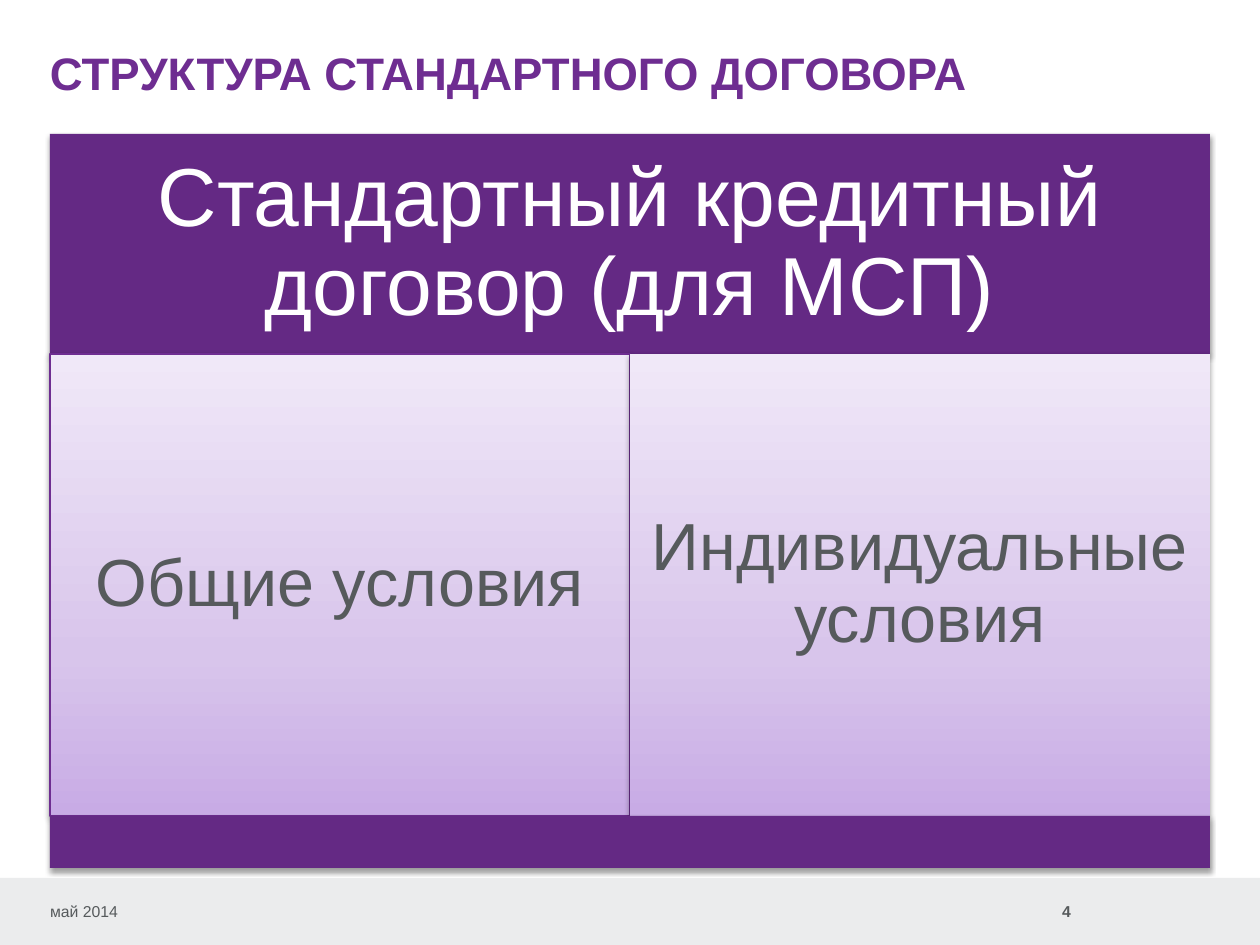
from lxml import etree
from pptx import Presentation
from pptx.dml.color import RGBColor
from pptx.enum.shapes import MSO_SHAPE
from pptx.enum.text import MSO_ANCHOR, PP_ALIGN
from pptx.oxml.ns import qn
from pptx.util import Pt

RECT = MSO_SHAPE.RECTANGLE
MIDDLE, TOP = MSO_ANCHOR.MIDDLE, MSO_ANCHOR.TOP
LEFT, CENTER, RIGHT = PP_ALIGN.LEFT, PP_ALIGN.CENTER, PP_ALIGN.RIGHT
PX = 914400 / 126
COLORS = {
    "title": "6E2D91",
    "band": "642984",
    "text": "565A5C",
    "white": "FFFFFF",
    "footer": "EBECED",
    "shadow": "000000",
}
COLUMN_GRADIENT = [(0, "C8ABE5"), (35, "D8C5EB"), (100, "F0E8F8")]
MARGIN, CONTENT_WIDTH = 50, 1160


def add_panel(left, top, width, height, fill=None, shadow=True):
    """Add a rectangle; without a fill colour it gets the column gradient."""
    panel = slide.shapes.add_shape(
        RECT, *(round(v * PX) for v in (left, top, width, height)))
    panel.line.fill.background()
    if fill:
        panel.fill.solid()
        panel.fill.fore_color.rgb = RGBColor.from_string(COLORS[fill])
    else:
        panel.fill.gradient()
        panel.fill.gradient_angle = 90
        stops = panel._element.spPr.find(".//" + qn("a:gsLst"))
        for stop in list(stops):
            stops.remove(stop)
        for position, color in COLUMN_GRADIENT:
            stop = etree.SubElement(stops, qn("a:gs"), pos=str(position * 1000))
            etree.SubElement(stop, qn("a:srgbClr"), val=color)
    panel.shadow.inherit = False
    if shadow:
        effects = panel._element.spPr.find(qn("a:effectLst"))
        outer = etree.SubElement(
            effects, qn("a:outerShdw"), blurRad=str(Pt(3.1)),
            dist=str(Pt(1.6)), dir="5400000", rotWithShape="0")
        shade = etree.SubElement(outer, qn("a:srgbClr"), val=COLORS["shadow"])
        etree.SubElement(shade, qn("a:alpha"), val="38000")
    return panel


def write(shape, text, size, color, align=LEFT, anchor=MIDDLE, inset=0,
          bold=False, wrap=True):
    frame = shape.text_frame
    frame.word_wrap = wrap
    frame.vertical_anchor = anchor
    frame.margin_left = frame.margin_right = round(inset * PX)
    frame.margin_top = frame.margin_bottom = round(inset * PX)
    paragraph = frame.paragraphs[0]
    paragraph.text = text
    paragraph.alignment = align
    font = paragraph.font
    font.name, font.size, font.bold = "Arial", Pt(size), bold
    font.color.rgb = RGBColor.from_string(COLORS[color])
    return paragraph


prs = Presentation()
prs.slide_width, prs.slide_height = round(1260 * PX), round(945 * PX)
slide = prs.slides.add_slide(prs.slide_layouts[6])

add_panel(0, 878, 1260, 67, "footer", shadow=False)

# Title, date and page number
for box, text, style in [
    ((MARGIN, 45, CONTENT_WIDTH, 55), "СТРУКТУРА СТАНДАРТНОГО ДОГОВОРА",
     dict(size=26, color="title", anchor=TOP, bold=True)),
    ((MARGIN, 902, 118, 19), "май 2014", dict(size=9, color="text")),
    ((1052, 902, 19, 19), "4",
     dict(size=9, color="text", align=RIGHT, bold=True, wrap=False)),
]:
    label = slide.shapes.add_textbox(*(round(v * PX) for v in box))
    write(label, text, **style)

# Contract heading
heading = add_panel(MARGIN, 134, CONTENT_WIDTH, 220, "band")
write(heading, "Стандартный кредитный договор (для МСП)", 47, "white",
      CENTER, inset=25).line_spacing = 0.9

# Two parts of the contract
column_width = CONTENT_WIDTH // 2
for index, part in enumerate(["Общие условия", "Индивидуальные условия"]):
    column = add_panel(MARGIN + index * column_width, 354, column_width, 462)
    if index == 0:
        column.line.color.rgb = RGBColor.from_string(COLORS["title"])
        column.line.width = Pt(0.75)
    write(column, part, 38, "text", CENTER, inset=20).line_spacing = 0.9

# Closing band
add_panel(MARGIN, 816, CONTENT_WIDTH, 52, "band")

prs.save("out.pptx")
